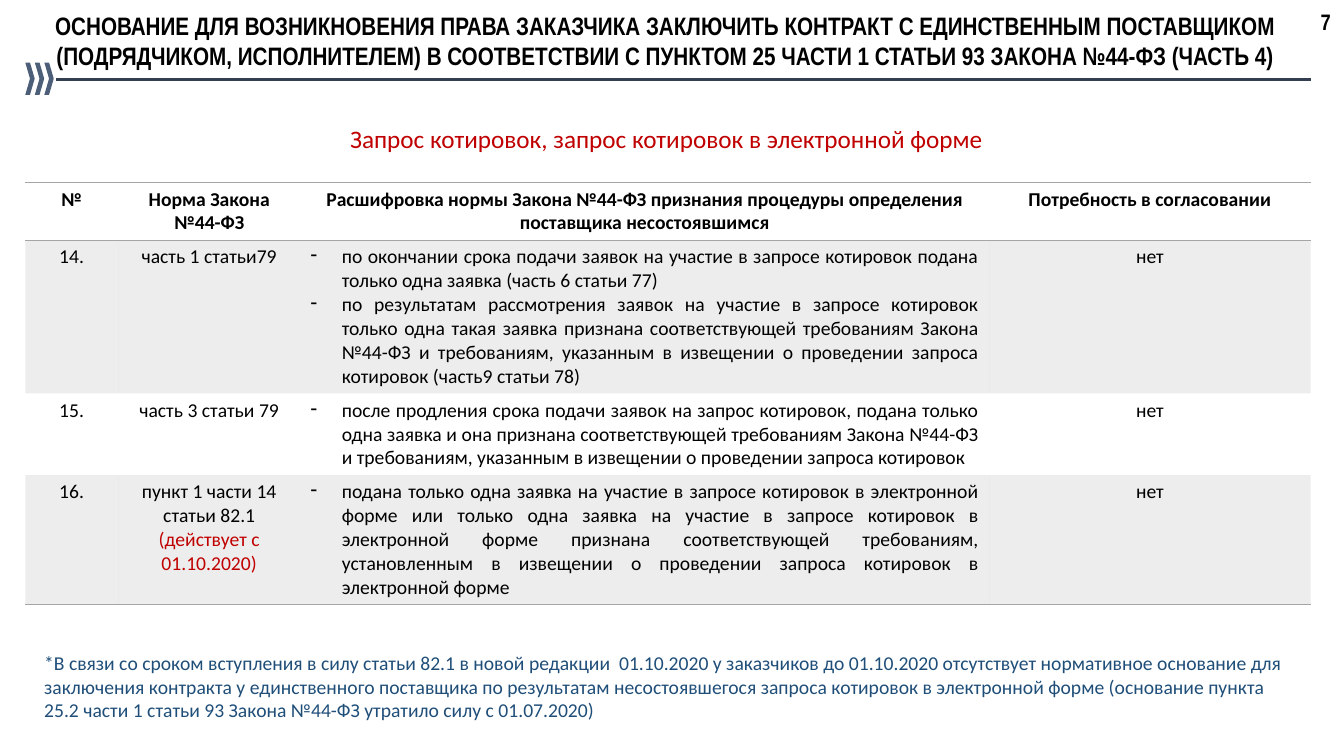
from dataclasses import dataclass

from lxml.etree import SubElement
from pptx import Presentation
from pptx.dml.color import RGBColor
from pptx.enum.shapes import MSO_CONNECTOR, MSO_SHAPE
from pptx.enum.text import MSO_AUTO_SIZE, PP_ALIGN
from pptx.oxml import parse_xml
from pptx.oxml.ns import nsdecls, qn
from pptx.slide import Slide
from pptx.table import Table, _Cell
from pptx.text.text import TextFrame
from pptx.util import Inches, Pt

WIDTH, HEIGHT = Inches(13.33), Inches(7.5)
COLORS = {"black": "000000", "red": "C00000", "blue": "1F4E79",
          "rule": "333F50", "chevron": "4C5E78", "gray": "A5A5A5"}
PLAIN_TABLE_STYLE = "{2D5ABB26-0587-4C30-8999-92F81FD0307C}"
HEADING = {"name": "Arial Narrow", "size": Pt(18), "bold": True}
PAGE = {**HEADING, "size": Pt(16)}
SUBTITLE = {"name": "Calibri", "size": Pt(18), "bold": False}
BODY = {**SUBTITLE, "size": Pt(14)}
TABLE_HEADING = {**BODY, "bold": True}


@dataclass(frozen=True)
class Paragraph:
    text: str
    font: dict
    color: str = "black"
    align: PP_ALIGN = PP_ALIGN.CENTER
    dash: bool = False


@dataclass(frozen=True)
class Area:
    """Place on the slide, in percent of its width and height."""
    left: float
    top: float
    width: float
    height: float

    def lengths(self) -> tuple[int, int, int, int]:
        return (across(self.left), down(self.top),
                across(self.width), down(self.height))


@dataclass(frozen=True)
class Label:
    area: Area
    paragraph: Paragraph


@dataclass(frozen=True)
class Row:
    height: float
    cells: list[list[Paragraph]]
    shaded: bool = False
    borders: tuple[str, ...] = ()


def across(percent: float) -> int:
    return round(WIDTH * percent / 100)


def down(percent: float) -> int:
    return round(HEIGHT * percent / 100)


def rgb(color: str) -> RGBColor:
    return RGBColor.from_string(COLORS[color])


def write(frame: TextFrame, items: list[Paragraph]) -> None:
    for index, item in enumerate(items):
        paragraph = frame.add_paragraph() if index else frame.paragraphs[0]
        paragraph.alignment = item.align
        run = paragraph.add_run()
        run.text = item.text
        for attribute, value in item.font.items():
            setattr(run.font, attribute, value)
        run.font.color.rgb = rgb(item.color)
        if item.dash:
            properties = paragraph._p.get_or_add_pPr()
            properties.set("marL", str(Inches(0.31)))
            properties.set("indent", str(-Inches(0.31)))
            SubElement(properties, qn("a:buChar"), char="-")


def add_label(slide: Slide, label: Label) -> None:
    frame = slide.shapes.add_textbox(*label.area.lengths()).text_frame
    frame.word_wrap = True
    frame.auto_size = MSO_AUTO_SIZE.SHAPE_TO_FIT_TEXT
    write(frame, [label.paragraph])


def add_rule(slide: Slide) -> None:
    rule = slide.shapes.add_connector(MSO_CONNECTOR.STRAIGHT, across(4.2), down(10.53),
                                      across(97.52), down(10.53))
    rule.line.color.rgb = rgb("rule")
    rule.line.width = Pt(2.75)
    SubElement(rule._element.spPr, qn("a:effectLst"))


def add_chevron(slide: Slide, area: Area) -> None:
    chevron = slide.shapes.add_shape(MSO_SHAPE.CHEVRON, *area.lengths())
    chevron.shadow.inherit = False
    chevron.fill.solid()
    chevron.fill.fore_color.rgb = rgb("chevron")
    chevron.line.fill.background()


def style_cell(cell: _Cell, row: Row) -> None:
    if row.shaded:
        cell.fill.solid()
        cell.fill.fore_color.rgb = rgb("gray")
        properties = cell._tc.get_or_add_tcPr()
        color = properties.find(f".//{qn('a:srgbClr')}")
        SubElement(color, qn("a:alpha"), val="20000")
    else:
        cell.fill.background()
    properties = cell._tc.get_or_add_tcPr()
    for position, side in enumerate(row.borders):
        properties.insert(position, parse_xml(
            f'<a:{side} {nsdecls("a")} w="{Pt(1)}"><a:solidFill>'
            f'<a:srgbClr val="{COLORS["gray"]}"/></a:solidFill></a:{side}>'))


def add_rules_table(slide: Slide, area: Area, columns: list[float], rows: list[Row]) -> None:
    table: Table = slide.shapes.add_table(len(rows), len(columns), *area.lengths()).table
    table.first_row = table.horz_banding = False
    table._tbl.tblPr.find(qn("a:tableStyleId")).text = PLAIN_TABLE_STYLE
    for column, width in zip(table.columns, columns):
        column.width = across(width)
    for table_row, row in zip(table.rows, rows):
        table_row.height = down(row.height)
        for cell, items in zip(table_row.cells, row.cells):
            style_cell(cell, row)
            write(cell.text_frame, items)


def centered(text: str, color: str = "black") -> Paragraph:
    return Paragraph(text, BODY, color)


def dashed(text: str) -> Paragraph:
    return Paragraph(text, BODY, align=PP_ALIGN.JUSTIFY, dash=True)


LABELS = [
    Label(Area(2.55, 0.67, 93.92, 9.47), Paragraph(
        "ОСНОВАНИЕ ДЛЯ ВОЗНИКНОВЕНИЯ ПРАВА ЗАКАЗЧИКА ЗАКЛЮЧИТЬ КОНТРАКТ С ЕДИНСТВЕННЫМ "
        "ПОСТАВЩИКОМ (ПОДРЯДЧИКОМ, ИСПОЛНИТЕЛЕМ) В СООТВЕТСТВИИ С ПУНКТОМ 25 ЧАСТИ 1 "
        "СТАТЬИ 93 ЗАКОНА №44-ФЗ (ЧАСТЬ 4)", HEADING)),
    Label(Area(97.52, 0.4, 2.25, 4.93), Paragraph("7", PAGE, align=PP_ALIGN.LEFT)),
    Label(Area(2.78, 15.6, 93.62, 5.33), Paragraph(
        "Запрос котировок, запрос котировок в электронной форме", SUBTITLE, "red")),
    Label(Area(2.55, 85.47, 95.05, 10.8), Paragraph(
        "*В связи со сроком вступления в силу статьи 82.1 в новой редакции  01.10.2020 у "
        "заказчиков до 01.10.2020 отсутствует нормативное основание для заключения контракта "
        "у единственного поставщика по результатам несостоявшегося запроса котировок в "
        "электронной форме (основание пункта 25.2 части 1 статьи 93 Закона №44-ФЗ утратило "
        "силу с 01.07.2020)", BODY, "blue", PP_ALIGN.LEFT)),
]
HEADERS = ["№", "Норма Закона №44-ФЗ", "Расшифровка нормы Закона №44-ФЗ признания процедуры "
           "определения поставщика несостоявшимся", "Потребность в согласовании"]
ROWS = [
    Row(7.6, [[Paragraph(text, TABLE_HEADING)] for text in HEADERS], borders=("lnT", "lnB")),
    Row(20, [[centered("14.")], [centered("часть 1 статьи79")], [
        dashed("по окончании срока подачи заявок на участие в запросе котировок подана только "
               "одна заявка (часть 6 статьи 77)"),
        dashed("по результатам рассмотрения заявок на участие в запросе котировок только одна "
               "такая заявка признана соответствующей требованиям Закона №44-ФЗ и требованиям, "
               "указанным в извещении о проведении запроса котировок (часть9 статьи 78)")],
        [centered("нет")]], shaded=True),
    Row(10.67, [[centered("15.")], [centered("часть 3 статьи 79")], [
        dashed("после продления срока подачи заявок на запрос котировок, подана только одна "
               "заявка и она признана соответствующей требованиям Закона №44-ФЗ и требованиям, "
               "указанным в извещении о проведении запроса котировок")], [centered("нет")]]),
    Row(16.93, [[centered("16.")], [centered("пункт 1 части 14 статьи 82.1"),
                                    centered("(действует с 01.10.2020)", "red")], [
        dashed("подана только одна заявка на участие в запросе котировок в электронной форме "
               "или только одна заявка на участие в запросе котировок в электронной форме "
               "признана соответствующей требованиям, установленным в извещении о проведении "
               "запроса котировок в электронной форме")], [centered("нет")]],
        shaded=True, borders=("lnB",)),
]


def main() -> None:
    presentation = Presentation()
    presentation.slide_width, presentation.slide_height = WIDTH, HEIGHT
    slide = presentation.slides.add_slide(presentation.slide_layouts[6])
    # Heading rule with its chevrons
    add_rule(slide)
    for index in range(3):
        add_chevron(slide, Area(1.88 + 0.71 * index, 8.27, 0.7, 4.27))
    # Table of the law's provisions
    add_rules_table(slide, Area(1.88, 24.13, 95.65, 55.2), [6.9, 13.58, 51.24, 23.93], ROWS)
    # Heading, page number, subtitle and footnote
    for label in LABELS:
        add_label(slide, label)
    presentation.save("out.pptx")


if __name__ == "__main__":
    main()
